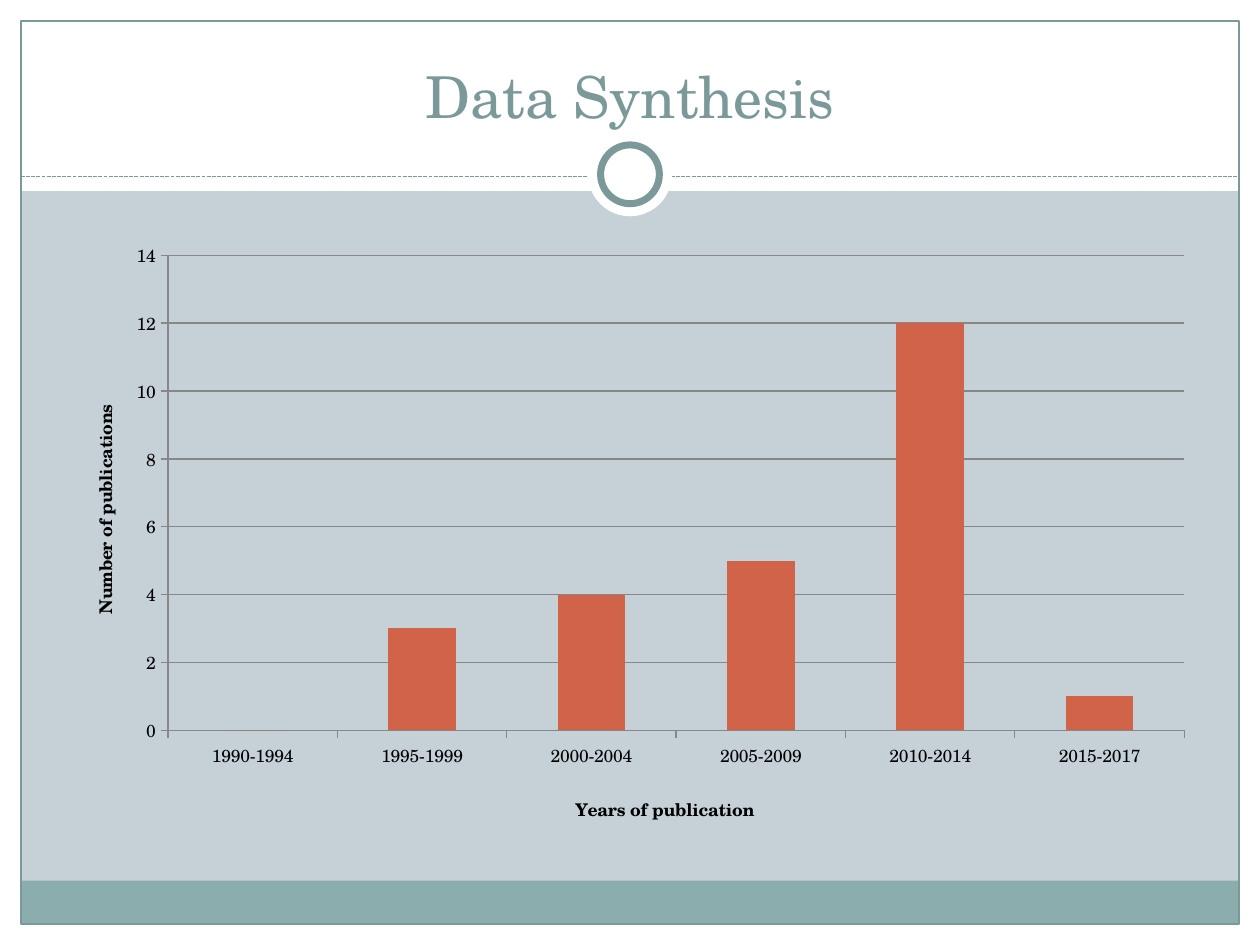
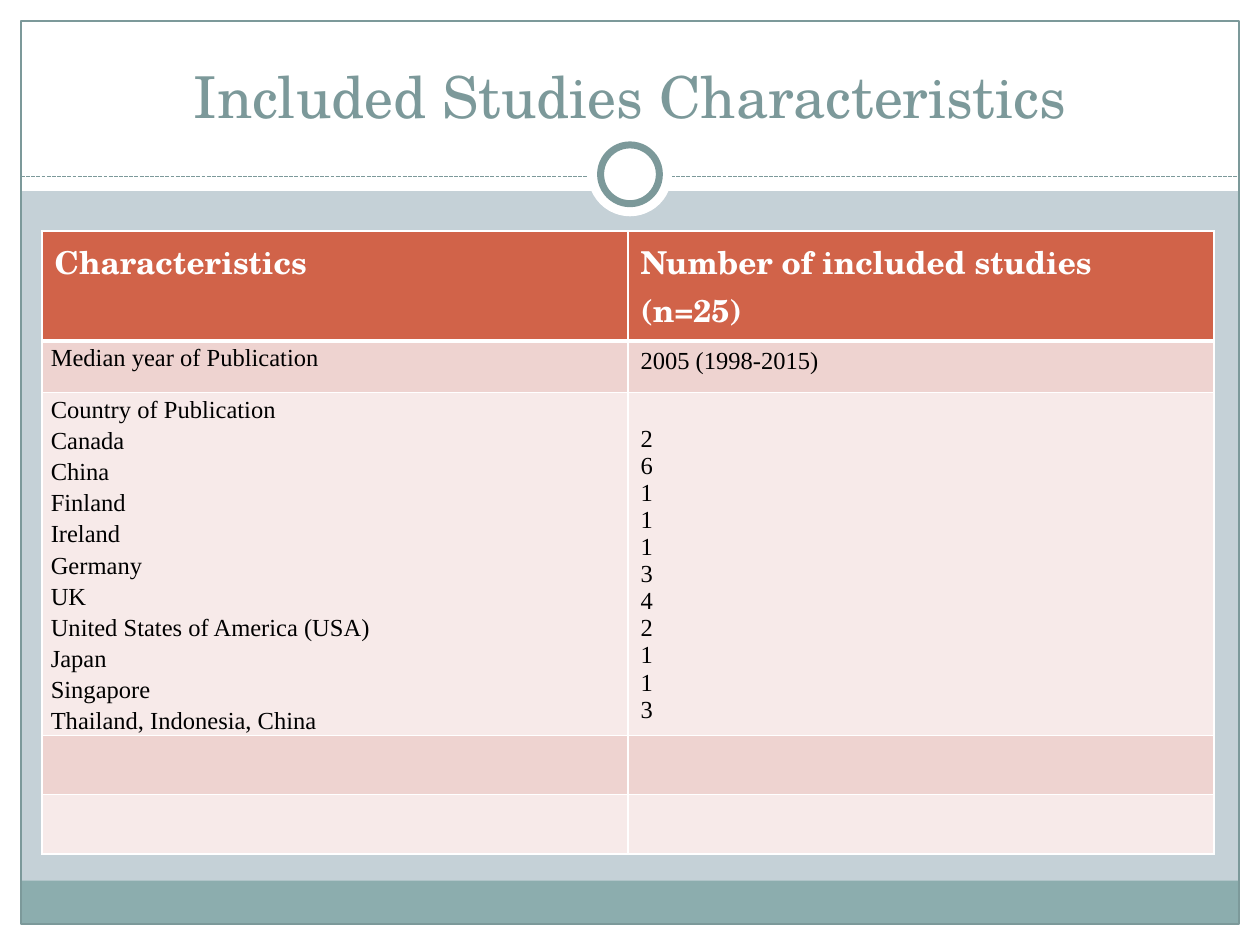
from dataclasses import dataclass
from typing import Any, Optional

from lxml.etree import SubElement
from pptx import Presentation
from pptx.chart.data import CategoryChartData as ChartData
from pptx.dml.color import RGBColor
from pptx.enum.chart import XL_CHART_TYPE as Chart
from pptx.enum.chart import XL_TICK_MARK as Tick
from pptx.enum.dml import MSO_LINE as Dash
from pptx.enum.shapes import MSO_CONNECTOR as Link
from pptx.enum.shapes import MSO_SHAPE as Shape
from pptx.enum.text import MSO_ANCHOR as Anchor
from pptx.enum.text import MSO_AUTO_SIZE as Fit
from pptx.enum.text import PP_ALIGN as Align
from pptx.oxml import parse_xml
from pptx.oxml.ns import nsdecls, qn
from pptx.util import Inches, Pt

WHITE = RGBColor(0xFF, 0xFF, 0xFF)
BLACK = RGBColor(0, 0, 0)
MIST = RGBColor(0xC5, 0xD1, 0xD7)
TEAL = RGBColor(0x8C, 0xAD, 0xAE)
SLATE = RGBColor(0x7C, 0x99, 0x9A)
RUST = RGBColor(0xD1, 0x63, 0x49)
ROSE = RGBColor(0xEE, 0xD3, 0xD0)
BLUSH = RGBColor(0xF7, 0xEA, 0xE9)
GREY = RGBColor(0x87, 0x87, 0x87)
SERIF = "TeX Gyre Schola"
ROMAN = "Times New Roman"

# The slide is a grid of 60 columns and 45 rows of square units.
COLS, ROWS = 60, 45
WIDTH, HEIGHT = Inches(10), Inches(7.5)
UNIT = WIDTH // COLS


def grid(*units: float) -> list[int]:
    return [round(u * UNIT) for u in units]


@dataclass
class Part:
    """A piece of the frame: left, top, width and height in grid units."""
    box: tuple[float, float, float, float]
    fill: Optional[RGBColor] = WHITE
    line: float = 0
    kind: Shape = Shape.RECTANGLE


@dataclass
class Row:
    """A table row; top and side hold cell margins in inches."""
    high: float
    fill: RGBColor
    left: tuple[str, ...] = ()
    right: tuple[str, ...] = ()
    drop: float = 0.05


BANDS = [
    Part((0, 44, COLS, 1)),
    Part((0, 0, COLS, 9.1)),
    Part((0, 0, 1, ROWS)),
    Part((59, 0, 1, ROWS)),
    Part((1, 41.94, 58, 2.06), TEAL),
    Part((1, 1, 58, 43), None, 0.75),
]
RINGS = [
    Part((28, 6.3, 4, 4), kind=Shape.OVAL),
    Part((28.6, 6.9, 2.8, 2.8), line=4, kind=Shape.OVAL),
]
YEARS = {"1990-1994": 0, "1995-1999": 3, "2000-2004": 4,
         "2005-2009": 5, "2010-2014": 12, "2015-2017": 1}
LANDS = {"Canada": 2, "China": 6, "Finland": 1, "Ireland": 1, "Germany": 1,
         "UK": 3, "United States of America (USA)": 4, "Japan": 2,
         "Singapore": 1, "Thailand, Indonesia, China": 1}
STUDIES = [
    Row(5.16, RUST, ("Characteristics",),
        ("Number of included studies (n=25)",)),
    Row(2.46, ROSE, ("Median year of Publication",), ("2005 (1998-2015)",)),
    Row(16.32, BLUSH, ("Country of Publication", *LANDS),
        (*map(str, LANDS.values()), "3"), 0.26),
    Row(2.82, ROSE),
    Row(2.82, BLUSH),
]


def style(item: Any, **vals: Any) -> None:
    for name, val in vals.items():
        setattr(item, name, val)


def ink(font: Any, size: float, color: RGBColor, bold: bool = False,
        name: str = SERIF) -> None:
    style(font, size=Pt(size), bold=bold, name=name)
    font.color.rgb = color


def draw(slide: Any, part: Part) -> Any:
    shape = slide.shapes.add_shape(part.kind, *grid(*part.box))
    shape.shadow.inherit = False
    if part.fill is None:
        shape.fill.background()
    else:
        shape.fill.solid()
        shape.fill.fore_color.rgb = part.fill
    if part.line:
        shape.line.color.rgb = SLATE
        shape.line.width = Pt(part.line)
    else:
        shape.line.fill.background()
    return shape


def rule(slide: Any) -> Any:
    line = slide.shapes.add_connector(Link.STRAIGHT, *grid(1, 8.4, 59, 8.4))
    line.line.color.rgb = SLATE
    style(line.line, width=Pt(0.75), dash_style=Dash.SQUARE_DOT)
    SubElement(line.element.spPr, qn("a:effectLst"))
    return line


def frame(layout: Any, slide: Any) -> None:
    """Draw the frame on the slide, then move it to the shared layout."""
    layout.background.fill.solid()
    layout.background.fill.fore_color.rgb = MIST
    parts = [draw(slide, p) for p in BANDS]
    parts.append(rule(slide))
    parts += [draw(slide, p) for p in RINGS]
    for num, shape in enumerate(parts, 100):
        shape.element.xpath(".//p:cNvPr")[0].set("id", str(num))
        layout.shapes.element.append(shape.element)


def head(slide: Any, text: str) -> None:
    title = slide.shapes.title
    left, top, width, height = grid(2, 1.5, 56, 5)
    style(title, left=left, top=top, width=width, height=height)
    style(title.text_frame, text=text, vertical_anchor=Anchor.BOTTOM,
          word_wrap=True, auto_size=Fit.NONE)
    para = title.text_frame.paragraphs[0]
    para.alignment = Align.CENTER
    ink(para.runs[0].font, 33, SLATE)


def place(node: Any, spot: int, **share: float) -> None:
    """Fix a chart part at shares of the chart's size."""
    for old in node.findall(qn("c:layout")):
        node.remove(old)
    target = '<c:layoutTarget val="inner"/>' if "w" in share else ""
    modes = "".join(f'<c:{k}Mode val="edge"/>' for k in "xy")
    vals = "".join(f'<c:{k} val="{v}"/>' for k, v in share.items())
    node.insert(spot, parse_xml(
        f'<c:layout {nsdecls("c")}><c:manualLayout>{target}{modes}{vals}'
        '</c:manualLayout></c:layout>'))


def label(axis: Any, text: str, x: float, y: float) -> None:
    title = axis.axis_title
    title.text_frame.text = text
    ink(title.text_frame.paragraphs[0].runs[0].font, 10, BLACK, True)
    place(title._element, 1, x=x, y=y)
    style(axis, major_tick_mark=Tick.OUTSIDE, minor_tick_mark=Tick.NONE)
    axis.format.line.color.rgb = GREY


def plot(slide: Any) -> None:
    data = ChartData()
    data.categories = list(YEARS)
    data.add_series("Series 1", list(YEARS.values()))
    chart = slide.shapes.add_chart(
        Chart.COLUMN_CLUSTERED, *grid(2.5, 11, 55, 29), data).chart
    style(chart, has_legend=False, has_title=False)
    ink(chart.font, 10, BLACK)
    bars = chart.plots[0]
    style(bars, gap_width=150, vary_by_categories=False)
    fill = bars.series[0].format.fill
    fill.solid()
    fill.fore_color.rgb = RUST
    count = chart.value_axis
    style(count, minimum_scale=0, maximum_scale=14, major_unit=2,
          has_major_gridlines=True)
    count.major_gridlines.format.line.color.rgb = GREY
    label(chart.category_axis, "Years of publication", 0.45, 0.92)
    label(count, "Number of publications", 0.03, 0.28)
    area = chart._chartSpace.find(".//" + qn("c:plotArea"))
    place(area, 0, x=0.1, y=0.04, w=0.88, h=0.78)


def edge(cell: Any, **wide: float) -> None:
    props = cell._tc.get_or_add_tcPr()
    for spot, side in enumerate("LRTB"):
        props.insert(spot, parse_xml(
            f'<a:ln{side} {nsdecls("a")} w="{Pt(wide.get(side, 1))}">'
            f'<a:solidFill><a:srgbClr val="{WHITE}"/></a:solidFill>'
            f'</a:ln{side}>'))


def write(cell: Any, lines: tuple[str, ...], top: bool, tight: bool) -> None:
    cell.text_frame.text = "\n".join(lines)
    for para in cell.text_frame.paragraphs:
        if tight:
            para.line_spacing = 1.15
        for run in para.runs:
            if top:
                ink(run.font, 18, WHITE, True)
            else:
                ink(run.font, 14, BLACK, name=ROMAN)


def table(slide: Any) -> None:
    high = sum(r.high for r in STUDIES)
    grown = slide.shapes.add_table(
        len(STUDIES), 2, *grid(2, 11, 55.8, high)).table
    for at, row in enumerate(STUDIES):
        grown.rows[at].height = grid(row.high)[0]
        for col, lines in enumerate((row.left, row.right)):
            cell = grown.cell(at, col)
            cell.fill.solid()
            cell.fill.fore_color.rgb = row.fill
            edge(cell, T=3 if at == 1 else 1, B=1 if at else 3)
            tight = bool(lines) and at > 0 and col == 0
            if tight:
                style(cell, margin_left=Inches(0.07), margin_top=0,
                      margin_right=Inches(0.07), margin_bottom=0)
            else:
                cell.margin_top = Inches(row.drop)
            if lines:
                write(cell, lines, at == 0, tight)


def main() -> None:
    deck = Presentation()
    style(deck, slide_width=WIDTH, slide_height=HEIGHT)
    layout = deck.slide_layouts.get_by_name("Title Only")
    pages = {"Data Synthesis": plot, "Included Studies Characteristics": table}
    for num, (text, fill) in enumerate(pages.items()):
        slide = deck.slides.add_slide(layout)
        if num == 0:
            frame(layout, slide)
        head(slide, text)
        fill(slide)
    deck.save("out.pptx")


if __name__ == "__main__":
    main()
